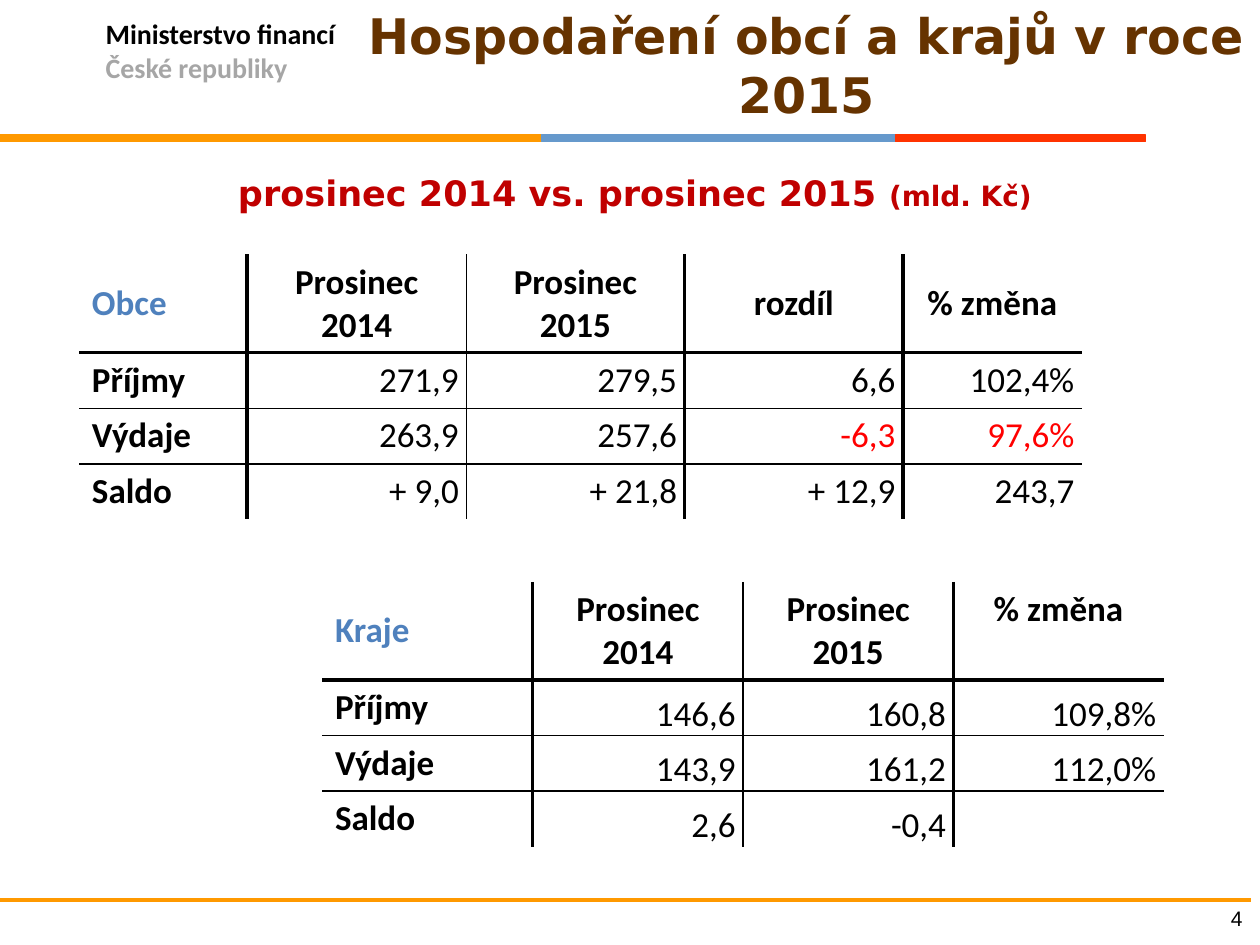
import pptx
import pptx.util
import pptx.dml.color
import pptx.enum.shapes
import pptx.enum.text
import pptx.oxml
import pptx.oxml.ns
import lxml.etree

Cm, Pt = pptx.util.Cm, pptx.util.Pt
ALIGN = pptx.enum.text.PP_ALIGN
ANCHOR = pptx.enum.text.MSO_ANCHOR
QN = pptx.oxml.ns.qn

THICK, THIN = 2.25, 1
BLACK, RED, ORANGE = "000000", "FF0000", "FF9900"
HEADER_HEIGHT, ROW_HEIGHT = 1.98, 1.12

OBCE = [
    ["Obce", "Prosinec\v2014", "Prosinec\v2015", "rozdíl", "% změna"],
    ["Příjmy", "271,9", "279,5", "6,6", "102,4%"],
    ["Výdaje", "263,9", "257,6", "-6,3", "97,6%"],
    ["Saldo", "+ 9,0", "+ 21,8", "+ 12,9", "243,7"],
]
KRAJE = [
    ["Kraje", "Prosinec\v2014", "Prosinec\v2015", "% změna"],
    ["Příjmy", "146,6", "160,8", "109,8%"],
    ["Výdaje", "143,9", "161,2", "112,0%"],
    ["Saldo", "2,6", "-0,4", ""],
]


def colour(hex_string):
    return pptx.dml.color.RGBColor.from_string(hex_string)


def set_format(target, values):
    for name, value in values.items():
        setattr(target, name, value)


def style_font(font, face, size, hex_string, bold=False):
    set_format(font, {"name": face, "size": Pt(size), "bold": bold})
    font.color.rgb = colour(hex_string)


def write(paragraph, text, align, *font_values):
    paragraph.text = text
    paragraph.alignment = align
    for run in paragraph.runs:
        style_font(run.font, *font_values)


def add_text_frame(slide, box, anchor):
    frame = slide.shapes.add_textbox(*map(Cm, box)).text_frame
    set_format(frame, {"word_wrap": True, "vertical_anchor": anchor})
    return frame


def set_borders(cell, widths):
    """Draw the left, right, top and bottom borders; zero means no border."""
    properties = cell._tc.get_or_add_tcPr()
    for index, (side, width) in enumerate(zip("LRTB", widths)):
        border = lxml.etree.Element(QN(f"a:ln{side}"), w=str(Pt(width)))
        if width:
            fill = lxml.etree.SubElement(border, QN("a:solidFill"))
            lxml.etree.SubElement(fill, QN("a:srgbClr"), val=BLACK)
        else:
            lxml.etree.SubElement(border, QN("a:noFill"))
        properties.insert(index, border)


# Header: ministry name, title and tricolour band
def add_header(slide, left, top):
    ministry = add_text_frame(slide, (left + 1.88, top + 0.2, 6.02, 1.63), ANCHOR.MIDDLE)
    write(ministry.paragraphs[0], "Ministerstvo financí", ALIGN.LEFT,
          "Calibri", 16, BLACK, True)
    write(ministry.add_paragraph(), "České republiky", ALIGN.LEFT,
          "Calibri", 16, "A6A6A6", True)

    title = slide.shapes.title
    set_format(title, {"left": Cm(left + 7.11), "top": Cm(top),
                       "width": Cm(18.29), "height": Cm(2.59)})
    set_format(title.text_frame, {"word_wrap": True, "vertical_anchor": ANCHOR.MIDDLE,
                                  "auto_size": pptx.enum.text.MSO_AUTO_SIZE.NONE})
    write(title.text_frame.paragraphs[0], "Hospodaření obcí a krajů v roce 2015",
          ALIGN.CENTER, "DejaVu Sans", 28, "663300", True)

    band = slide.shapes.add_group_shape()
    stripe_left = left
    for width, hex_string in ((10.92, ORANGE), (7.13, "6699CC"), (5.05, "FF3300")):
        stripe = band.shapes.add_shape(pptx.enum.shapes.MSO_SHAPE.RECTANGLE,
                                       Cm(stripe_left), Cm(top + 2.72), Cm(width), Cm(0.13))
        stripe.shadow.inherit = False
        stripe.fill.solid()
        stripe.fill.fore_color.rgb = colour(hex_string)
        stripe.line.color.rgb = colour(hex_string)
        stripe.line.width = Pt(0.75)
        stripe_left += width


# Subtitle: compared months and unit
def add_subtitle(slide, box):
    paragraph = add_text_frame(slide, box, ANCHOR.MIDDLE).paragraphs[0]
    paragraph.alignment = ALIGN.CENTER
    for text, size in (("prosinec 2014 vs. prosinec 2015 ", 20), ("(mld. Kč)", 16)):
        run = paragraph.add_run()
        run.text = text
        style_font(run.font, "DejaVu Sans", size, "C00000", True)


# Budget table: heading row, label column and right-aligned amounts
def add_budget(slide, left, top, widths, rows, amount_anchor, heading_anchors, red_cells=()):
    height = HEADER_HEIGHT + ROW_HEIGHT * (len(rows) - 1)
    table = slide.shapes.add_table(len(rows), len(widths), Cm(left), Cm(top),
                                   Cm(sum(widths)), Cm(height)).table
    set_format(table, {"first_row": False, "horz_banding": False})
    for column, width in zip(table.columns, widths):
        column.width = Cm(width)
    for r, row in enumerate(table.rows):
        row.height = Cm(ROW_HEIGHT if r else HEADER_HEIGHT)

    vertical = [0, THICK, THIN] + [THICK] * (len(widths) - 3) + [0]
    horizontal = [0, THICK] + [THIN] * (len(rows) - 2) + [0]
    for r, texts in enumerate(rows):
        for c, text in enumerate(texts):
            cell = table.cell(r, c)
            cell.fill.background()
            set_borders(cell, (vertical[c], vertical[c + 1],
                               horizontal[r], horizontal[r + 1]))
            amount = r > 0 and c > 0
            if amount:
                align = ALIGN.RIGHT
                set_format(cell, {"margin_left": 0, "margin_top": 0, "margin_bottom": 0,
                                  "margin_right": Cm(0.15),
                                  "vertical_anchor": amount_anchor})
            else:
                align = ALIGN.CENTER if c else ALIGN.LEFT
                cell.vertical_anchor = ANCHOR.TOP if r else heading_anchors[c]
            text_colour = BLACK
            if (r, c) == (0, 0):
                text_colour = "4F81BD"
            elif (r, c) in red_cells:
                text_colour = RED
            write(cell.text_frame.paragraphs[0], text, align,
                  "Calibri", 20, text_colour, not amount)


# Footer: rule and page number
def add_footer(slide, left, top):
    page = add_text_frame(slide, (left + 24.1, top, 1.2, 0.76), ANCHOR.TOP)
    write(page.paragraphs[0], "4", ALIGN.RIGHT, "Arial", 12, BLACK)
    rule = slide.shapes.add_connector(pptx.enum.shapes.MSO_CONNECTOR.STRAIGHT,
                                      Cm(left), Cm(top), Cm(left + 25.22), Cm(top))
    rule.line.color.rgb = colour(ORANGE)
    rule.line.width = Pt(2)
    lxml.etree.SubElement(rule._element.spPr, QN("a:effectLst"))


def main():
    presentation = pptx.Presentation()
    presentation.slide_width, presentation.slide_height = Cm(25.4), Cm(19.05)
    slide = presentation.slides.add_slide(presentation.slide_layouts[5])
    middle, upper = ANCHOR.MIDDLE, ANCHOR.TOP

    add_header(slide, 0, 0)
    add_budget(slide, 1.6, 5.13, [3.38, 4.42, 4.4, 4.4, 3.61], OBCE, middle,
               [middle, upper, upper, middle, middle], red_cells={(2, 3), (2, 4)})
    add_budget(slide, 6.5, 11.73, [4.24] * 4, KRAJE, ANCHOR.BOTTOM,
               [middle, upper, upper, upper])
    add_footer(slide, 0, 18.14)
    add_subtitle(slide, (1.5, 3.23, 22.6, 1.3))

    presentation.save("out.pptx")


if __name__ == "__main__":
    main()
